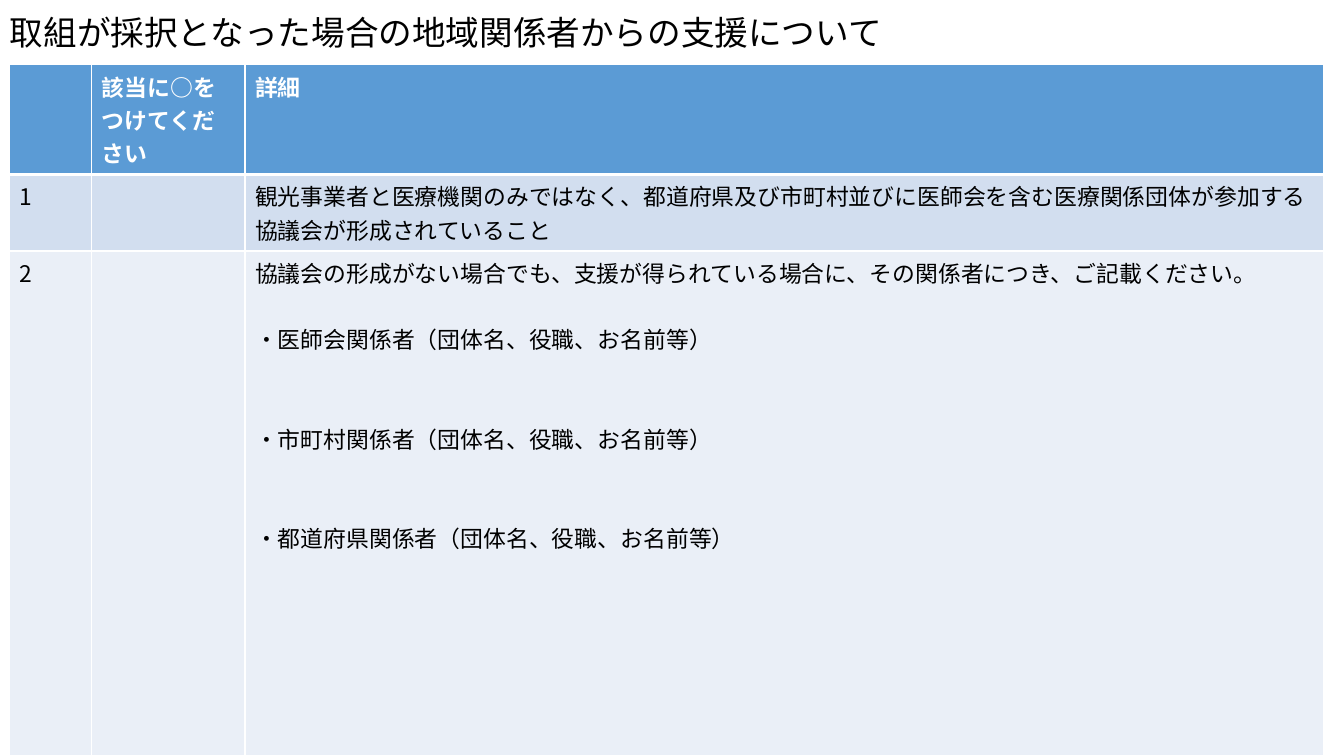
import pptx
import pptx.util
import pptx.dml.color
import pptx.enum.text
import lxml.etree
from pptx.oxml.ns import qn
from dataclasses import dataclass

TITLE = "取組が採択となった場合の地域関係者からの支援について"
ROWS = [
    ["", "該当に○をつけてください", "詳細"],
    ["1", "", "観光事業者と医療機関のみではなく、都道府県及び市町村並びに"
              "医師会を含む医療関係団体が参加する協議会が形成されていること"],
    ["2", "", "協議会の形成がない場合でも、支援が得られている場合に、"
              "その関係者につき、ご記載ください。\n"
              "・医師会関係者（団体名、役職、お名前等）\n"
              "・市町村関係者（団体名、役職、お名前等）\n"
              "・都道府県関係者（団体名、役職、お名前等）"],
]
GAPS = [0, 1, 2, 2]  # free lines above each paragraph of a cell
COLS = [0.82, 1.52, 10.7]
TALL = [1.09, 0.76, 5.01]


@dataclass
class Theme:
    font: str = "Noto Sans CJK JP"
    head: float = 24
    body: float = 16.3
    line: float = 23.7
    black: str = "000000"
    white: str = "FFFFFF"
    fills: tuple = ("5B9BD5", "D2DEEF", "EAEFF7")
    thin: float = 1
    thick: float = 3


theme = Theme()
inch, pt = pptx.util.Inches, pptx.util.Pt
rgb = pptx.dml.color.RGBColor.from_string


def style(para, size, color, bold=False):
    for run in para.runs:
        font = run.font
        font.name, font.size, font.bold = theme.font, pt(size), bold
        font.color.rgb = rgb(color)
        east = lxml.etree.Element(qn("a:ea"), typeface=theme.font)
        font._element.find(qn("a:latin")).addnext(east)


def border(cell, top, base):
    """Draw white lines on all four sides; top and base are widths in points."""
    props = cell._tc.get_or_add_tcPr()
    sides = [("L", theme.thin), ("R", theme.thin), ("T", top), ("B", base)]
    for spot, (side, width) in enumerate(sides):
        line = lxml.etree.Element(qn("a:ln" + side), w=str(pt(width)))
        fill = lxml.etree.SubElement(line, qn("a:solidFill"))
        lxml.etree.SubElement(fill, qn("a:srgbClr"), val=theme.white)
        props.insert(spot, line)


def add_title(slide):
    box = slide.shapes.add_textbox(0, inch(0.17), inch(9.62), inch(0.34))
    frame = box.text_frame
    frame.word_wrap = True
    frame.vertical_anchor = pptx.enum.text.MSO_ANCHOR.MIDDLE
    frame.text = TITLE
    frame.paragraphs[0].line_spacing = 0.9
    style(frame.paragraphs[0], theme.head, theme.black)


def fill_cell(cell, text, row):
    head = row == 0
    cell.text_frame.text = text
    for para, gap in zip(cell.text_frame.paragraphs, GAPS):
        para.space_before = pt(gap * theme.line)
        style(para, theme.body, theme.white if head else theme.black, head)
    cell.fill.solid()
    cell.fill.fore_color.rgb = rgb(theme.fills[row])
    border(cell, theme.thick if row == 1 else theme.thin,
           theme.thick if head else theme.thin)


def add_grid(slide):
    table = slide.shapes.add_table(
        len(ROWS), len(COLS), inch(0.09), inch(0.64),
        inch(sum(COLS)), inch(sum(TALL))).table
    for col, width in zip(table.columns, COLS):
        col.width = inch(width)
    for row, height in enumerate(TALL):
        table.rows[row].height = inch(height)
        for col, text in enumerate(ROWS[row]):
            fill_cell(table.cell(row, col), text, row)


def main():
    deck = pptx.Presentation()
    deck.slide_width, deck.slide_height = inch(13.33), inch(7.5)
    slide = deck.slides.add_slide(deck.slide_layouts[6])
    add_title(slide)
    add_grid(slide)
    deck.save("out.pptx")


if __name__ == "__main__":
    main()
